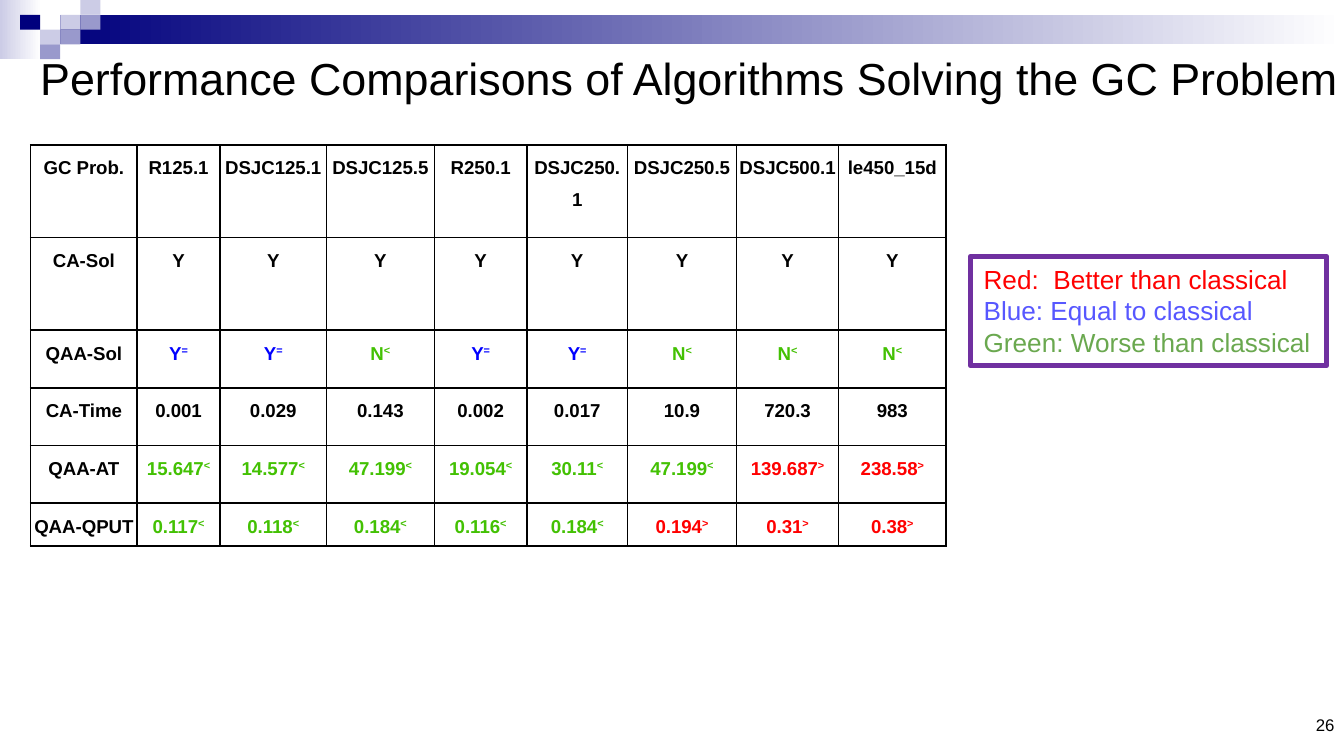
from lxml import etree
from pptx import Presentation
from pptx.dml.color import RGBColor
from pptx.enum.shapes import MSO_SHAPE
from pptx.enum.text import MSO_ANCHOR, PP_ALIGN
from pptx.oxml.ns import qn
from pptx.util import Cm, Pt

RECT = MSO_SHAPE.RECTANGLE
LEFT, CENTER, RIGHT = PP_ALIGN.LEFT, PP_ALIGN.CENTER, PP_ALIGN.RIGHT
TOP, MIDDLE, BOTTOM = MSO_ANCHOR.TOP, MSO_ANCHOR.MIDDLE, MSO_ANCHOR.BOTTOM

BLACK = RGBColor(0x00, 0x00, 0x00)
WHITE = RGBColor(0xFF, 0xFF, 0xFF)
NAVY = RGBColor(0x00, 0x00, 0x7D)
LAVENDER = RGBColor(0xCC, 0xCC, 0xE6)
PERIWINKLE = RGBColor(0x99, 0x99, 0xCC)
PURPLE = RGBColor(0x70, 0x30, 0xA0)
RED = RGBColor(0xFF, 0x00, 0x00)
BLUE = RGBColor(0x00, 0x00, 0xFF)
GREEN = RGBColor(0x43, 0xC1, 0x03)
LEGEND_BLUE = RGBColor(0x57, 0x57, 0xFF)
LEGEND_GREEN = RGBColor(0x6A, 0xA8, 0x4F)

FONT = "Arial"
TILE_W, TILE_H = 0.38, 0.28
# Column, row and colour of each tile in the corner mosaic
TILES = [
    (3, 1, LAVENDER), (4, 0, LAVENDER), (4, 1, PERIWINKLE), (2, 2, LAVENDER),
    (1, 1, NAVY), (3, 2, PERIWINKLE), (2, 3, PERIWINKLE),
]

# A trailing mark compares the quantum result with the classical one
MARK_COLORS = {"=": BLUE, "<": GREEN, ">": RED}
COL_WIDTHS = [2.01, 1.57, 2.01, 2.04, 1.75, 1.9, 2.06, 1.93, 2.03]
ROW_HEIGHTS = [1.75, 1.75, 1.09, 1.09, 1.09, 0.81]
RESULTS = [
    ["GC Prob.", "R125.1", "DSJC125.1", "DSJC125.5", "R250.1",
     "DSJC250.1", "DSJC250.5", "DSJC500.1", "le450_15d"],
    ["CA-Sol"] + ["Y"] * 8,
    ["QAA-Sol", "Y=", "Y=", "N<", "Y=", "Y=", "N<", "N<", "N<"],
    ["CA-Time", "0.001", "0.029", "0.143", "0.002", "0.017", "10.9", "720.3", "983"],
    ["QAA-AT", "15.647<", "14.577<", "47.199<", "19.054<",
     "30.11<", "47.199<", "139.687>", "238.58>"],
    ["QAA-QPUT", "0.117<", "0.118<", "0.184<", "0.116<",
     "0.184<", "0.194>", "0.31>", "0.38>"],
]
LEGEND = [
    ("Red:  Better than classical", RED),
    ("Blue: Equal to classical", LEGEND_BLUE),
    ("Green: Worse than classical", LEGEND_GREEN),
]


def format_font(font, size, color, bold=False):
    font.name, font.size, font.bold = FONT, Pt(size), bold
    font.color.rgb = color


def set_margins(target, x, y):
    target.margin_left = target.margin_right = Cm(x)
    target.margin_top = target.margin_bottom = Cm(y)


def add_rect(slide, x, y, w, h):
    sp = slide.shapes.add_shape(RECT, Cm(x), Cm(y), Cm(w), Cm(h))
    sp.shadow.inherit = False
    sp.line.fill.background()
    return sp


def add_gradient(slide, x, y, w, h, start):
    """Add a bar that fades from start to white, left to right."""
    fill = add_rect(slide, x, y, w, h).fill
    fill.gradient()
    fill.gradient_angle = 0
    for stop, color in zip(fill.gradient_stops, (start, WHITE)):
        stop.color.rgb = color


def add_header(slide):
    add_gradient(slide, 0, 0, 0.78, 1.12, LAVENDER)
    bar_x = 3 * TILE_W
    add_gradient(slide, bar_x, TILE_H, 25.4 - bar_x, 2 * TILE_H, NAVY)
    for col, row, color in TILES:
        sp = add_rect(slide, col * TILE_W, row * TILE_H, TILE_W, TILE_H)
        sp.fill.solid()
        sp.fill.fore_color.rgb = color


def add_text(slide, x, y, w, h, text, size, align, anchor):
    tf = slide.shapes.add_textbox(Cm(x), Cm(y), Cm(w), Cm(h)).text_frame
    tf.word_wrap = True
    tf.vertical_anchor = anchor
    set_margins(tf, 0.18, 0.1)
    tf.text = text
    p = tf.paragraphs[0]
    p.alignment = align
    format_font(p.runs[0].font, size, BLACK)


def add_borders(cell):
    tc_pr = cell._tc.get_or_add_tcPr()
    for side in ("a:lnL", "a:lnR", "a:lnT", "a:lnB"):
        ln = etree.SubElement(tc_pr, qn(side), w=str(Pt(1)))
        fill = etree.SubElement(ln, qn("a:solidFill"))
        etree.SubElement(fill, qn("a:srgbClr"), val=str(BLACK))


def fill_cell(cell, text):
    """Write the value, with its comparison mark raised and coloured."""
    add_borders(cell)
    cell.fill.background()
    set_margins(cell, 0.05, 0.05)
    cell.vertical_anchor = TOP
    value = text.rstrip("=<>")
    mark = text[len(value):]
    p = cell.text_frame.paragraphs[0]
    p.text = value
    p.alignment = CENTER
    p.line_spacing = 1.5
    if mark:
        r = p.add_run()
        r.text = mark
        r._r.get_or_add_rPr().set("baseline", "30000")
    for r in p.runs:
        format_font(r.font, 10, MARK_COLORS.get(mark, BLACK), bold=True)


def add_results(slide):
    table = slide.shapes.add_table(
        len(ROW_HEIGHTS), len(COL_WIDTHS), Cm(0.58), Cm(2.74),
        Cm(sum(COL_WIDTHS)), Cm(sum(ROW_HEIGHTS))).table
    table.first_row = table.horz_banding = False
    for column, width in zip(table.columns, COL_WIDTHS):
        column.width = Cm(width)
    for row, height, values in zip(table.rows, ROW_HEIGHTS, RESULTS):
        row.height = Cm(height)
        for cell, text in zip(row.cells, values):
            fill_cell(cell, text)


def add_legend(slide):
    sp = add_rect(slide, 18.34, 4.85, 6.73, 2.06)
    sp.fill.background()
    sp.line.color.rgb = PURPLE
    sp.line.width = Pt(3)
    tf = sp.text_frame
    tf.word_wrap = True
    tf.vertical_anchor = TOP
    set_margins(tf, 0.25, 0.13)
    tf.text = "\n".join(text for text, _ in LEGEND)
    for p, (_, color) in zip(tf.paragraphs, LEGEND):
        p.alignment = LEFT
        format_font(p.runs[0].font, 14, color)


def main():
    prs = Presentation()
    prs.slide_width, prs.slide_height = Cm(25.4), Cm(14.29)
    slide = prs.slides.add_slide(prs.slide_layouts[6])
    add_header(slide)
    add_text(slide, 19.48, 13.49, 5.92, 0.51, "26", 9, RIGHT, BOTTOM)
    add_text(slide, 0.58, 0.81, 25.4, 1.3,
             "Performance Comparisons of Algorithms Solving the GC Problem",
             24, LEFT, MIDDLE)
    add_results(slide)
    add_legend(slide)
    prs.save("out.pptx")


if __name__ == "__main__":
    main()
